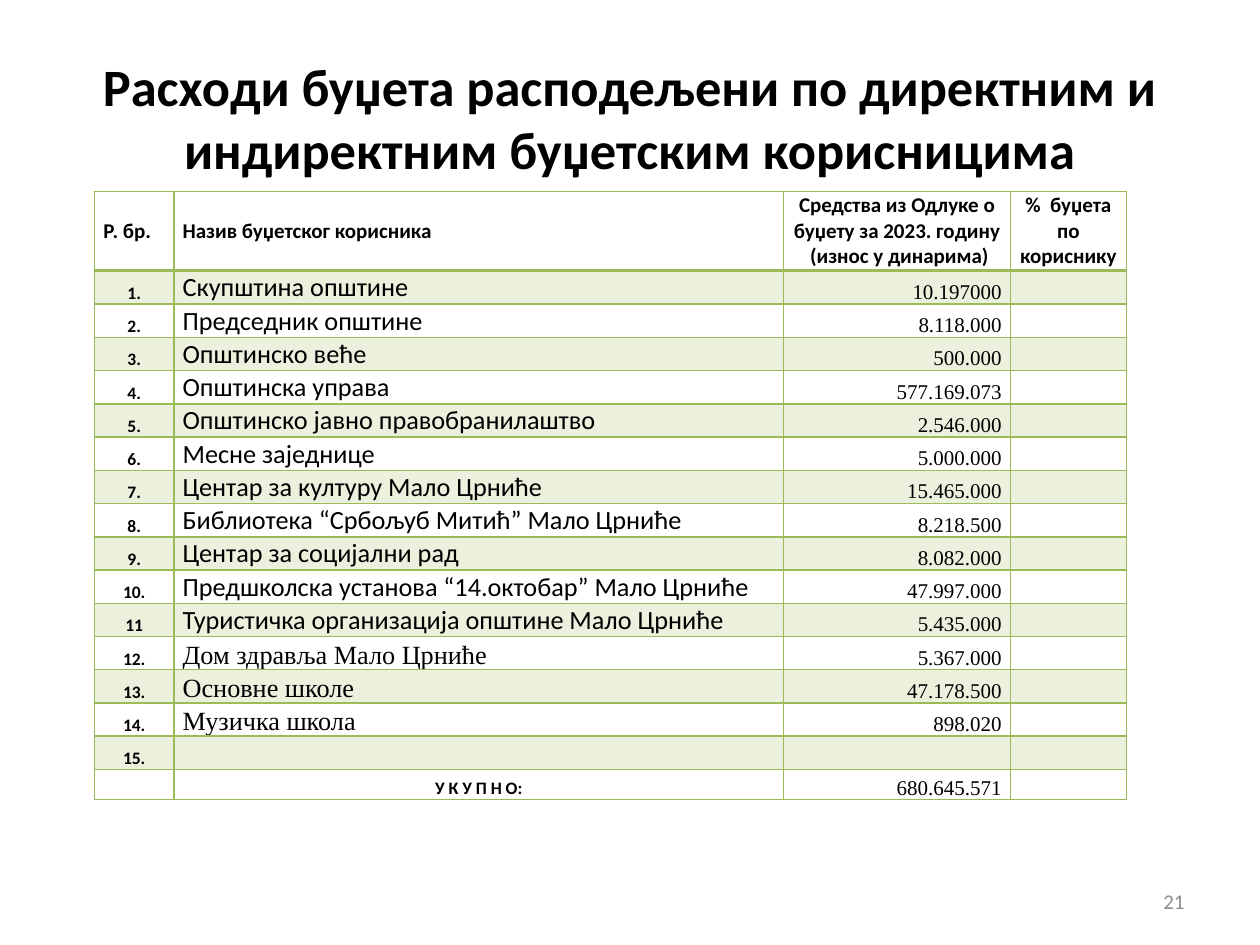
import lxml.etree
import pptx
import pptx.dml.color
import pptx.enum.text
import pptx.oxml.ns
import pptx.util

Inches, Pt = pptx.util.Inches, pptx.util.Pt
ALIGN, ANCHOR = pptx.enum.text.PP_ALIGN, pptx.enum.text.MSO_ANCHOR
qn = pptx.oxml.ns.qn
GREEN = "9BBB59"
SANS, SERIF = "Calibri", "Times New Roman"


def color(value):
    return pptx.dml.color.RGBColor.from_string(value)


def write(tf, text, size, font=SANS, bold=False, align=ALIGN.LEFT, ink="000000"):
    """Fill a text frame with one formatted paragraph; an empty one keeps its size."""
    p = tf.paragraphs[0]
    p.text = text
    p.alignment = align
    if not text:
        lxml.etree.SubElement(p._p, qn("a:endParaRPr"), sz=str(size * 100))
    for r in p.runs:
        r.font.size, r.font.name, r.font.bold = Pt(size), font, bold
        r.font.color.rgb = color(ink)


prs = pptx.Presentation()
prs.slide_width, prs.slide_height = Inches(10), Inches(7.5)
s = prs.slides.add_slide(prs.slide_layouts[6])

# Title and slide number
for box, text, size, bold, align, ink in [
    ((0.5, 0.3, 9, 1.25), "Расходи буџета расподељени по директним и индиректним буџетским корисницима",
     30, True, ALIGN.CENTER, "000000"),
    ((7.17, 6.95, 2.33, 0.4), "21", 12, False, ALIGN.RIGHT, "8C8C8C"),
]:
    tf = s.shapes.add_textbox(*map(Inches, box)).text_frame
    tf.word_wrap = True
    tf.vertical_anchor = ANCHOR.MIDDLE
    write(tf, text, size, SANS, bold, align, ink)

# Budget table
header = ["Р. бр.", "Назив буџетског корисника",
          "Средства из Одлуке о буџету за 2023. годину  (износ у динарима)",
          "%  буџета по кориснику"]
users = [
    ("1.", "Скупштина општине", "10.197000"),
    ("2.", "Председник општине", "8.118.000"),
    ("3.", "Општинско веће", "500.000"),
    ("4.", "Општинска управа", "577.169.073"),
    ("5.", "Општинско јавно правобранилаштво", "2.546.000"),
    ("6.", "Месне заједнице", "5.000.000"),
    ("7.", "Центар за културу Мало Црниће", "15.465.000"),
    ("8.", "Библиотека “Србољуб Митић” Мало Црниће", "8.218.500"),
    ("9.", "Центар за социјални рад", "8.082.000"),
    ("10.", "Предшколска установа “14.октобар” Мало Црниће", "47.997.000"),
    ("11", "Туристичка организација општине Мало Црниће", "5.435.000"),
    ("12.", "Дом здравља Мало Црниће", "5.367.000"),
    ("13.", "Основне школе", "47.178.500"),
    ("14.", "Музичка школа", "898.020"),
    ("15.", "", ""),
]
total = ("", "У К У П Н О:", "680.645.571", "")
rows = [header] + [(*user, "") for user in users] + [total]
last = len(rows) - 1
first_serif_row = 12

col_widths = [0.63, 4.84, 1.8, 0.92]
height, head_height, total_height = 4.83, 0.63, 0.24
user_height = (height - head_height - total_height) / len(users)
row_heights = [head_height] + [user_height] * len(users) + [total_height]

table = s.shapes.add_table(len(rows), len(header), Inches(0.75), Inches(1.52),
                           Inches(sum(col_widths)), Inches(height)).table
table.first_row = table.horz_banding = False
for column, width in zip(table.columns, col_widths):
    column.width = Inches(width)

for i, texts in enumerate(rows):
    table.rows[i].height = Inches(row_heights[i])
    for j, text in enumerate(texts):
        cell = table.cell(i, j)
        cell.margin_left = cell.margin_right = Inches(0.07)
        cell.margin_top = cell.margin_bottom = 0
        cell.vertical_anchor = ANCHOR.BOTTOM if i else ANCHOR.MIDDLE

        if i == 0:
            style = (12, SANS, True, ALIGN.LEFT if j < 2 else ALIGN.CENTER)
        elif j == 0 or not text or (i == last and j == 1):
            style = (10, SANS, True, ALIGN.CENTER)
        elif j == 1:
            style = (15, SERIF if i >= first_serif_row else SANS, False, ALIGN.LEFT)
        else:
            style = (12, SERIF, False, ALIGN.RIGHT)
        write(cell.text_frame, text, *style)

        tcPr = cell._tc.get_or_add_tcPr()
        for side in "LRTB":
            thick = (i, side) in [(0, "B"), (1, "T")]
            ln = lxml.etree.SubElement(tcPr, qn("a:ln" + side), w=str(Pt(2 if thick else 1)))
            fill = lxml.etree.SubElement(ln, qn("a:solidFill"))
            lxml.etree.SubElement(fill, qn("a:srgbClr"), val=GREEN)

        if i % 2:
            cell.fill.solid()
            cell.fill.fore_color.rgb = color(GREEN)
            tint = tcPr.find(qn("a:solidFill")).find(qn("a:srgbClr"))
            lxml.etree.SubElement(tint, qn("a:alpha"), val="20000")
        else:
            cell.fill.background()

prs.save("out.pptx")
